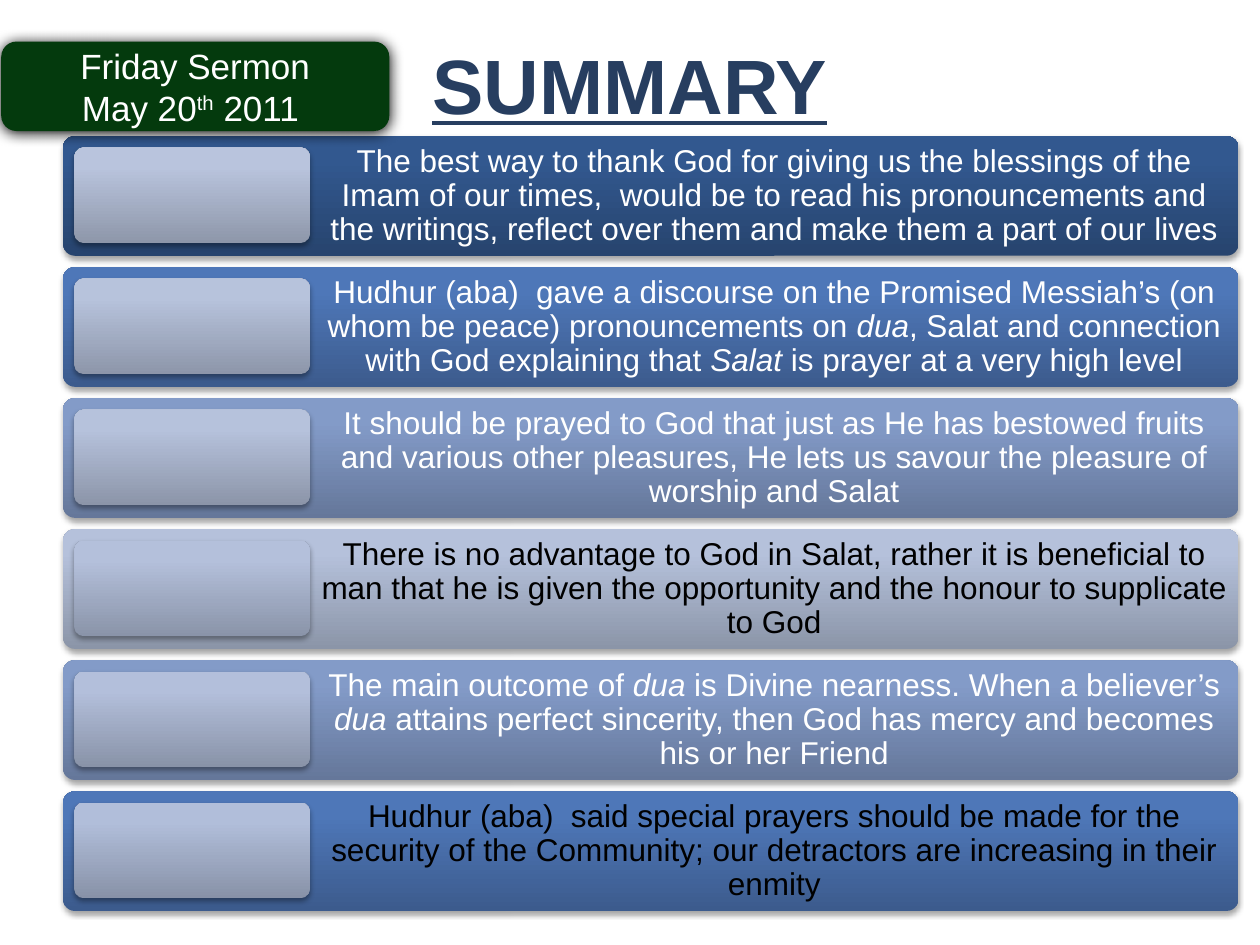
from lxml.etree import SubElement
from pptx import Presentation
from pptx.dml.color import RGBColor
from pptx.enum.shapes import MSO_SHAPE as Shape
from pptx.enum.text import MSO_ANCHOR as Anchor, MSO_AUTO_SIZE as AutoSize, PP_ALIGN as Align
from pptx.oxml.ns import qn
from pptx.util import Inches, Pt

WHITE = RGBColor(0xFF, 0xFF, 0xFF)
BLACK = RGBColor(0x00, 0x00, 0x00)
TITLE_NAVY = RGBColor(0x27, 0x3E, 0x60)
BADGE_GREEN = RGBColor(0x04, 0x3A, 0x0D)

# Gradients run from the bottom colour up to the top colour
NAVY = RGBColor(0x27, 0x44, 0x6E), RGBColor(0x32, 0x58, 0x8F)
BLUE = RGBColor(0x3C, 0x5B, 0x8D), RGBColor(0x4E, 0x77, 0xB8)
STEEL = RGBColor(0x65, 0x77, 0x9A), RGBColor(0x83, 0x9B, 0xC8)
MIST = RGBColor(0x8B, 0x95, 0xA8), RGBColor(0xB5, 0xC1, 0xDB)
FIRST_TILE = RGBColor(0x8E, 0x97, 0xAA), RGBColor(0xB9, 0xC4, 0xDD)
LAST_TILE = RGBColor(0x88, 0x92, 0xA8), RGBColor(0xB1, 0xBE, 0xDA)

# Row grid, in inches
GRID_TOP, ROW_PITCH, BAR_HEIGHT = 1.08, 1.04, 0.95
BAR_LEFT, BAR_WIDTH = 0.5, 9.33
TILE_INSET, TILE_WIDTH, TILE_HEIGHT = 0.09, 1.87, 0.76
TEXT_LEFT = BAR_LEFT + TILE_INSET + TILE_WIDTH

# Bar gradient, text colour, text (*italic*)
POINTS = [
    (NAVY, WHITE, "The best way to thank God for giving us the blessings of the Imam of our "
     "times,  would be to read his pronouncements and the writings, reflect over them and "
     "make them a part of our lives"),
    (BLUE, WHITE, "Hudhur (aba)  gave a discourse on the Promised Messiah’s (on whom be peace) "
     "pronouncements on *dua*, Salat and connection with God explaining that *Salat *is "
     "prayer at a very high level"),
    (STEEL, WHITE, "It should be prayed to God that just as He has bestowed fruits and various "
     "other pleasures, He lets us savour the pleasure of worship and Salat"),
    (MIST, BLACK, "There is no advantage to God in Salat, rather it is beneficial to man that "
     "he is given the opportunity and the honour to supplicate to God"),
    (STEEL, WHITE, "The main outcome of *dua* is Divine nearness. When a believer’s *dua* "
     "attains perfect sincerity, then God has mercy and becomes his or her Friend"),
    (BLUE, BLACK, "Hudhur (aba)  said special prayers should be made for the security of the "
     "Community; our detractors are increasing in their enmity"),
]


def blend(start, end, share):
    return RGBColor(*(round(a + (b - a) * share) for a, b in zip(start, end)))


class SummarySlide:
    font_name = "Arial"

    def __init__(self, deck):
        self.slide = deck.slides.add_slide(deck.slide_layouts[5])

    def style(self, paragraph, size, color):
        paragraph.alignment = Align.CENTER
        font = paragraph.font
        font.name, font.size = self.font_name, Pt(size)
        font.color.rgb = color

    def title(self, text, left, top, width, height):
        title = self.slide.shapes.title
        title.left, title.top = Inches(left), Inches(top)
        title.width, title.height = Inches(width), Inches(height)
        frame = title.text_frame
        frame.text = text
        frame.auto_size, frame.vertical_anchor = AutoSize.NONE, Anchor.TOP
        frame.margin_left = frame.margin_right = frame.margin_bottom = 0
        frame.margin_top = Inches(0.05)
        heading = frame.paragraphs[0]
        self.style(heading, 44, TITLE_NAVY)
        heading.font.bold = heading.font.underline = True

    def panel(self, left, top, width, height, fill, corner=0.1, shadow=(35, 3.1, 1.8)):
        """Rounded panel; fill is one colour or a (bottom, top) gradient."""
        panel = self.slide.shapes.add_shape(
            Shape.ROUNDED_RECTANGLE, Inches(left), Inches(top), Inches(width), Inches(height))
        panel.adjustments[0] = corner
        panel.line.fill.background()
        if isinstance(fill, RGBColor):
            panel.fill.solid()
            panel.fill.fore_color.rgb = fill
        else:
            panel.fill.gradient()
            panel.fill.gradient_angle = 90
            for stop, color, position in zip(panel.fill.gradient_stops, fill, (0, 0.8)):
                stop.color.rgb, stop.position = color, position
        self.drop_shadow(panel, *shadow)
        return panel

    def drop_shadow(self, panel, opacity, blur, distance):
        panel.shadow.inherit = False
        effects = panel._element.spPr.find(qn("a:effectLst"))
        outer = SubElement(effects, qn("a:outerShdw"), blurRad=str(Pt(blur)),
                           dist=str(Pt(distance)), dir="5400000", rotWithShape="0")
        black = SubElement(outer, qn("a:srgbClr"), val=str(BLACK))
        SubElement(black, qn("a:alpha"), val=str(opacity * 1000))

    def statement(self, text, left, top, width, height, color):
        box = self.slide.shapes.add_textbox(
            Inches(left), Inches(top), Inches(width), Inches(height))
        frame = box.text_frame
        frame.word_wrap, frame.vertical_anchor = True, Anchor.MIDDLE
        frame.margin_left = frame.margin_right = Inches(0.07)
        frame.margin_top = frame.margin_bottom = Inches(0.07)
        paragraph = frame.paragraphs[0]
        self.style(paragraph, 18, color)
        paragraph.line_spacing = 0.9
        for index, part in enumerate(text.split("*")):
            run = paragraph.add_run()
            run.text = part
            if index % 2:
                run.font.italic = True

    def badge(self, left, top, width, height):
        badge = self.panel(left, top, width, height, BADGE_GREEN, 0.17, (100, 8.5, 1))
        frame = badge.text_frame
        frame.vertical_anchor = Anchor.MIDDLE
        occasion, date = frame.paragraphs[0], frame.add_paragraph()
        occasion.text = "Friday Sermon"
        for part in ("May 20", "th", " 2011 "):
            run = date.add_run()
            run.text = part
            if part == "th":
                run._r.get_or_add_rPr().set("baseline", "30000")
        for line in (occasion, date):
            self.style(line, 20, WHITE)


def main():
    deck = Presentation()
    deck.slide_width, deck.slide_height = Inches(10), Inches(7.5)
    summary = SummarySlide(deck)
    summary.title("SUMMARY", 0.5, 0.25, 9, 1)

    # One bar, statement and tile per point
    for row, (gradient, text_color, text) in enumerate(POINTS):
        top = GRID_TOP + row * ROW_PITCH
        summary.panel(BAR_LEFT, top, BAR_WIDTH, BAR_HEIGHT, gradient)
        summary.statement(text, TEXT_LEFT, top, BAR_LEFT + BAR_WIDTH - TEXT_LEFT,
                          BAR_HEIGHT, text_color)
        share = row / (len(POINTS) - 1)
        tile = [blend(a, b, share) for a, b in zip(FIRST_TILE, LAST_TILE)]
        summary.panel(BAR_LEFT + TILE_INSET, top + TILE_INSET, TILE_WIDTH, TILE_HEIGHT, tile)

    # Date badge
    summary.badge(0.01, 0.33, 3.08, 0.71)
    deck.save("out.pptx")


if __name__ == "__main__":
    main()
